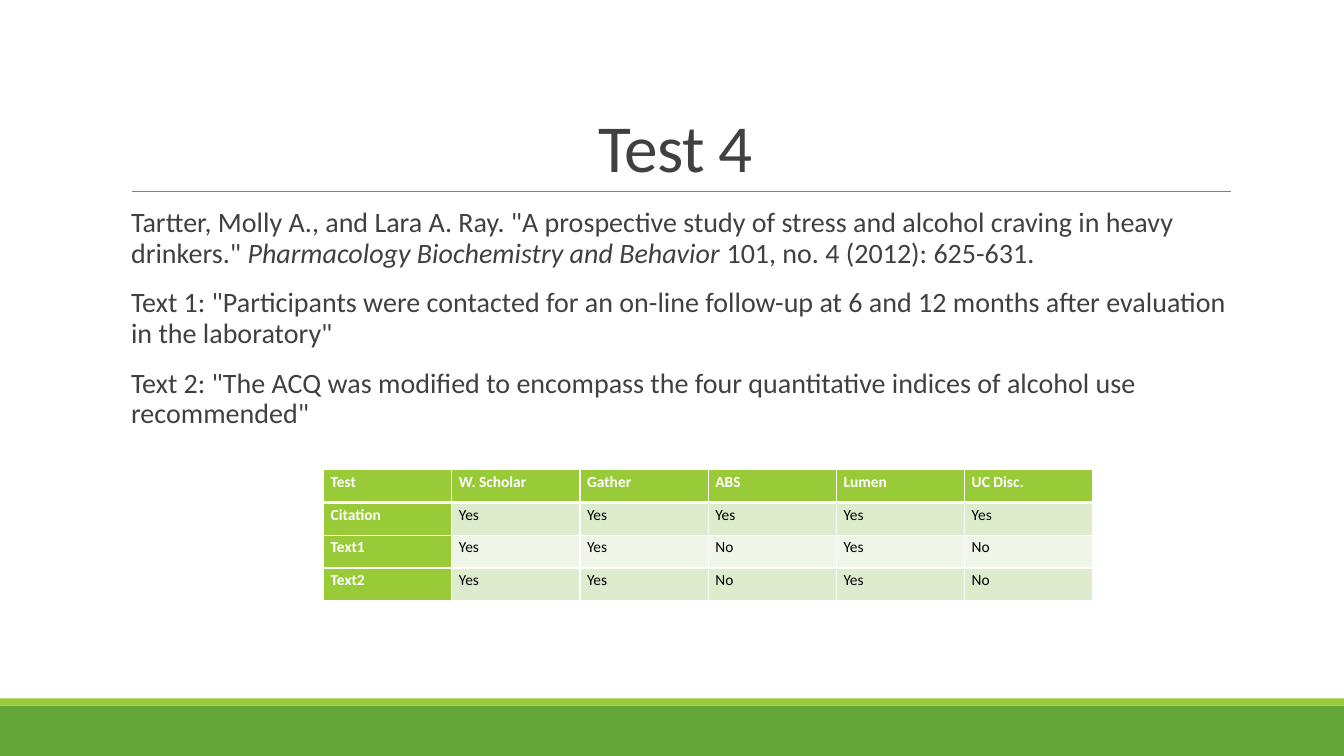
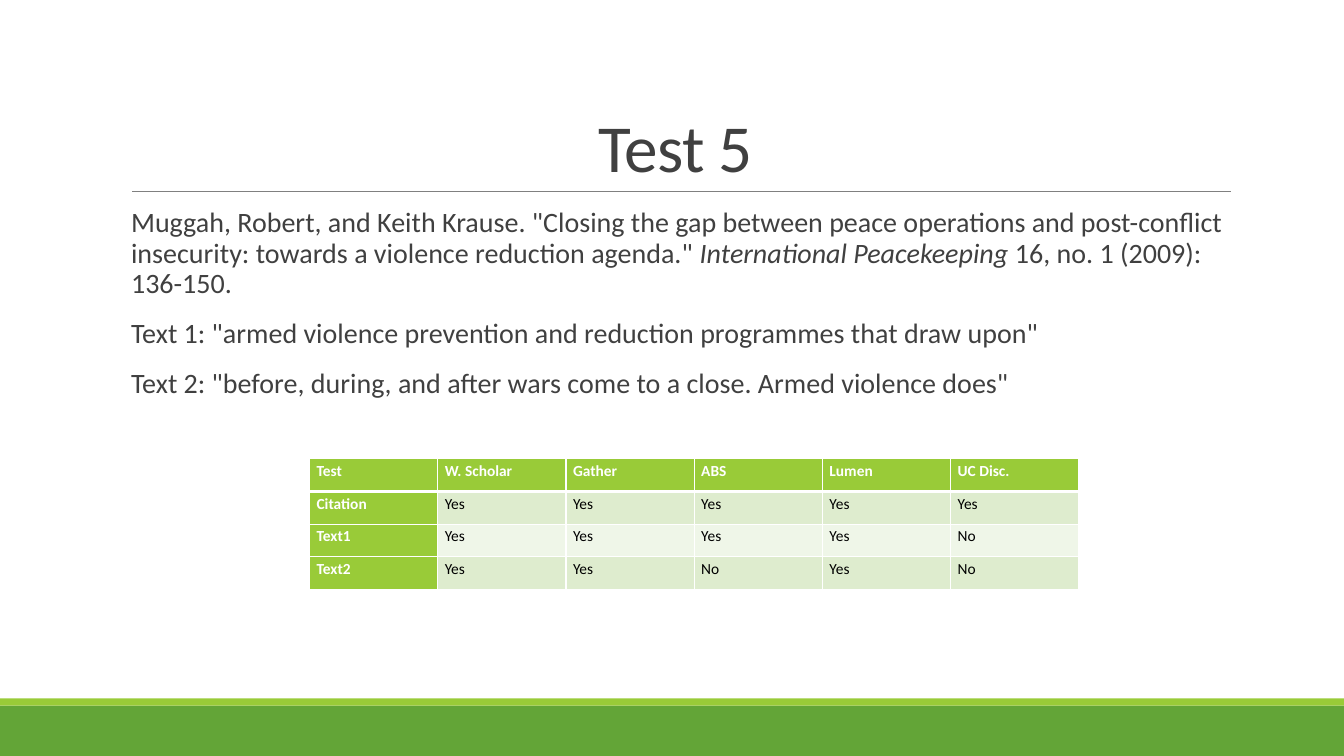
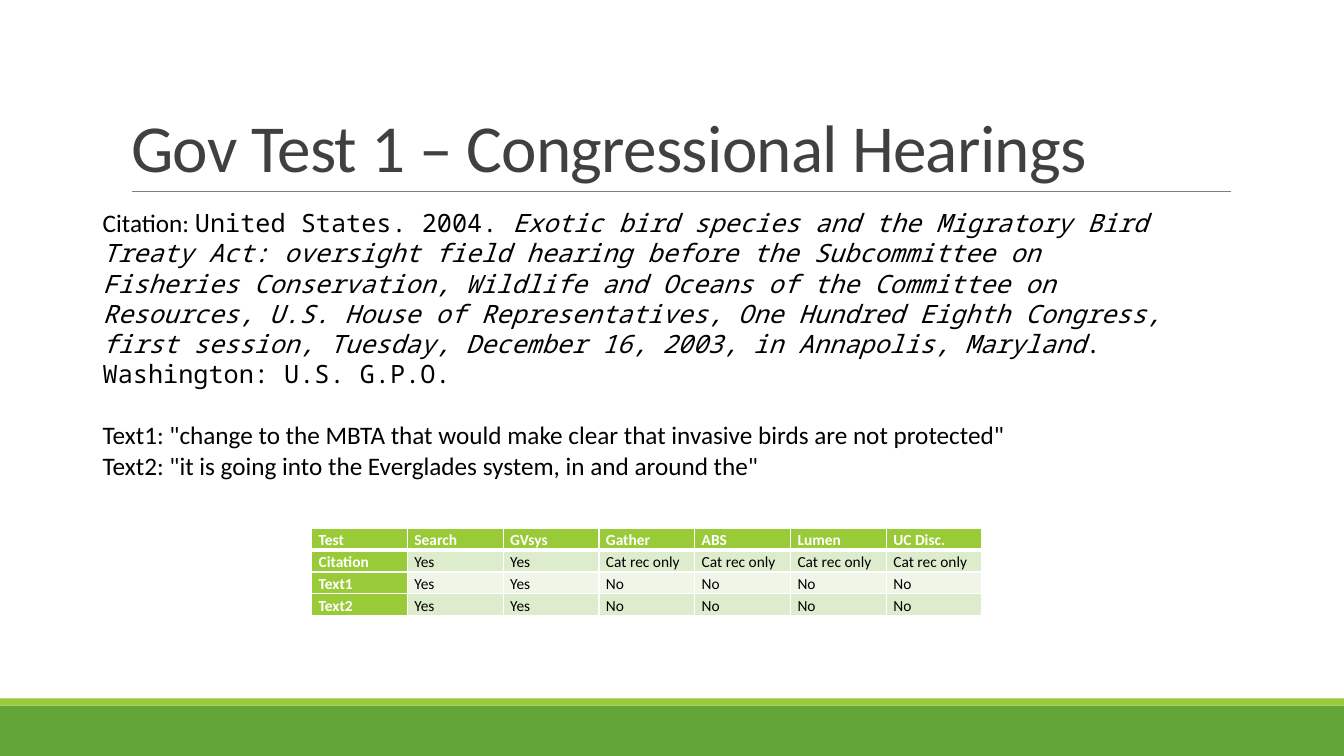
from pptx import Presentation
from pptx.dml.color import RGBColor
from pptx.enum.shapes import MSO_CONNECTOR, MSO_SHAPE
from pptx.enum.text import MSO_ANCHOR, MSO_AUTO_SIZE, PP_ALIGN
from pptx.oxml import parse_xml
from pptx.oxml.ns import nsdecls, qn
from pptx.util import Inches, Pt

RECT, LINE = MSO_SHAPE.RECTANGLE, MSO_CONNECTOR.STRAIGHT
LEFT, MID = PP_ALIGN.LEFT, PP_ALIGN.CENTER
TOP, BASE = MSO_ANCHOR.TOP, MSO_ANCHOR.BOTTOM
FIXED, GROW = MSO_AUTO_SIZE.NONE, MSO_AUTO_SIZE.SHAPE_TO_FIT_TEXT

HUES = {
    "band": "63A537", "lime": "99CB38", "rule": "808080", "ink": "404040",
    "black": "000000", "white": "FFFFFF", "tint": "DEECCE", "pale": "EFF6E8",
}
SANS, MONO = "Calibri", "Noto Sans Mono"
HEAD = {"name": SANS, "size": Pt(48)}
BODY = {"name": SANS, "size": Pt(20)}
NOTE = {"name": SANS, "size": Pt(18)}
CELL = {"name": SANS, "size": Pt(11)}
SLANT, CODE = {"italic": True}, {"name": MONO}

TITLE_BOX = (1.2, 0.31, 11, 1.59)
LIST_BOX = (1.2, 2.02, 11, 4.4)
NOTE_BOX = (0.92, 2.01, 10.99, 2.22)

TOOLS = ["Test", "W. Scholar", "Gather", "ABS", "Lumen", "UC Disc."]
TESTS = [
    {
        "title": "Test 4",
        "paras": [
            [("Tartter, Molly A., and Lara A. Ray. \"A prospective study of stress "
              "and alcohol craving in heavy drinkers.\" ", {}),
             ("Pharmacology Biochemistry and Behavior", SLANT),
             (" 101, no. 4 (2012): 625-631.", {})],
            [("Text 1: \"Participants were contacted for an on-line follow-up at 6 "
              "and 12 months after evaluation in the laboratory\"", {})],
            [("Text 2: \"The ACQ was modified to encompass the four quantitative "
              "indices of alcohol use recommended\"", {})],
        ],
        "box": (3.21, 4.66, 7.63, 1.3),
        "rows": [
            TOOLS,
            ["Citation"] + ["Yes"] * 5,
            ["Text1", "Yes", "Yes", "No", "Yes", "No"],
            ["Text2", "Yes", "Yes", "No", "Yes", "No"],
        ],
    },
    {
        "title": "Test 5",
        "paras": [
            [("Muggah, Robert, and Keith Krause. \"Closing the gap between peace "
              "operations and post-conflict insecurity: towards a violence "
              "reduction agenda.\" ", {}),
             ("International Peacekeeping", SLANT),
             (" 16, no. 1 (2009): 136-150.", {})],
            [("Text 1: \"armed violence prevention and reduction programmes that "
              "draw upon\"", {})],
            [("Text 2: \"before, during, and after wars come to a close. Armed "
              "violence does\"", {})],
        ],
        "box": (3.07, 4.55, 7.63, 1.3),
        "rows": [
            TOOLS,
            ["Citation"] + ["Yes"] * 5,
            ["Text1", "Yes", "Yes", "Yes", "Yes", "No"],
            ["Text2", "Yes", "Yes", "No", "Yes", "No"],
        ],
    },
]
HEARING = {
    "title": "Gov Test 1 – Congressional Hearings",
    "paras": [
        [("Citation: ", {}),
         ("United States. 2004. ", CODE),
         ("Exotic bird species and the Migratory Bird Treaty Act: oversight field "
          "hearing before the Subcommittee on Fisheries Conservation, Wildlife and "
          "Oceans of the Committee on Resources, U.S. House of Representatives, One "
          "Hundred Eighth Congress, first session, Tuesday, December 16, 2003, in "
          "Annapolis, Maryland", {**CODE, **SLANT}),
         (". Washington: U.S. G.P.O.", CODE)],
        [("Text1: \"change to the MBTA that would make clear that invasive birds "
          "are not protected\"", {})],
        [("Text2: \"it is going into the Everglades system, in and around the\"", {})],
    ],
    "box": (3.09, 5.24, 6.65, 0.8),
    "rows": [
        ["Test", "Search", "GVsys"] + TOOLS[2:],
        ["Citation", "Yes", "Yes"] + ["Cat rec only"] * 4,
        ["Text1", "Yes", "Yes"] + ["No"] * 4,
        ["Text2", "Yes", "Yes"] + ["No"] * 4,
    ],
}


def hue(name):
    return RGBColor.from_string(HUES[name])


def style(item, look):
    for key, value in look.items():
        setattr(item, key, value)


def place(shape, box):
    for key, value in zip(("left", "top", "width", "height"), box):
        setattr(shape, key, Inches(value))


def write(frame, paras, font, ink, form):
    """Fill a text frame; each paragraph is a list of (text, format) runs."""
    for i, runs in enumerate(paras):
        para = frame.add_paragraph() if i else frame.paragraphs[0]
        style(para, form)
        for text, extra in runs:
            run = para.add_run()
            run.text = text
            style(run.font, {**font, **extra})
            run.font.color.rgb = hue(ink)


def add_frame(slide):
    """Draw the bands and rule, then hand them to the slide master."""
    parts = []
    for name, top, high in (("band", 7, 0.5), ("lime", 6.93, 0.07)):
        bar = slide.shapes.add_shape(
            RECT, 0, Inches(top), Inches(13.33), Inches(high))
        bar.shadow.inherit = False
        bar.fill.solid()
        bar.fill.fore_color.rgb = hue(name)
        bar.line.fill.background()
        parts.append(bar)
    rule = slide.shapes.add_connector(
        LINE, Inches(1.31), Inches(1.9), Inches(12.21), Inches(1.9))
    rule.line.color.rgb = hue("rule")
    rule.line.width = Pt(0.5)
    rule.element.spPr.append(parse_xml(f"<a:effectLst {nsdecls('a')}/>"))
    parts.append(rule)
    master = slide.slide_layout.slide_master.element
    for i, part in enumerate(parts):
        master.cSld.spTree.insert(2 + i, part.element)
    # Title letter spacing
    for font in master.xpath(".//p:titleStyle/a:lvl1pPr/a:defRPr"):
        font.set("spc", "-50")


def add_title(slide, text, align, box):
    title = slide.shapes.title
    place(title, box)
    style(title.text_frame, {
        "vertical_anchor": BASE, "auto_size": FIXED, "word_wrap": True})
    write(title.text_frame, [[(text, {})]], HEAD, "ink",
          {"alignment": align, "line_spacing": 0.85})


def add_list(slide, paras, box):
    body = slide.placeholders[1]
    place(body, box)
    frame = body.text_frame
    style(frame, {"margin_left": 0, "margin_right": 0, "vertical_anchor": TOP,
                  "auto_size": FIXED, "word_wrap": True})
    write(frame, paras, BODY, "ink", {
        "line_spacing": 0.9, "space_before": Pt(12), "space_after": Pt(2)})
    # Plain paragraphs with a small left indent
    for props in body.element.iter(qn("a:pPr")):
        props.set("marL", str(Inches(0.1)))
        props.set("indent", "0")
        props.append(parse_xml(f"<a:buNone {nsdecls('a')}/>"))


def add_note(slide, paras, box):
    note = slide.shapes.add_textbox(*map(Inches, box))
    style(note.text_frame, {"word_wrap": True, "auto_size": GROW})
    write(note.text_frame, paras, NOTE, "black", {"alignment": LEFT})
    note.text_frame.paragraphs[1].space_before = Pt(22)


def edge(cell, row):
    """White borders, thicker below the header row."""
    props = cell._tc.get_or_add_tcPr()
    wide = {"T": 3 if row == 1 else 1, "B": 3 if row == 0 else 1}
    for side in "LRTB":
        props.append(parse_xml(
            f"<a:ln{side} {nsdecls('a')} w=\"{Pt(wide.get(side, 1))}\">"
            f"<a:solidFill><a:srgbClr val=\"{HUES['white']}\"/></a:solidFill>"
            f"</a:ln{side}>"))


def add_grid(slide, rows, box):
    table = slide.shapes.add_table(
        len(rows), len(rows[0]), *map(Inches, box)).table
    for r, row in enumerate(rows):
        for c, text in enumerate(row):
            cell = table.cell(r, c)
            head = r == 0 or c == 0
            style(cell, {"margin_left": Inches(0.07), "margin_right": Inches(0.07),
                         "margin_top": 0, "margin_bottom": 0})
            edge(cell, r)
            cell.fill.solid()
            cell.fill.fore_color.rgb = hue(
                "lime" if head else "tint" if r % 2 else "pale")
            write(cell.text_frame, [[(text, {"bold": head})]], CELL,
                  "white" if head else "black",
                  {"line_spacing": 1.15, "space_after": Pt(10)})


def add_test(deck, data):
    slide = deck.slides.add_slide(deck.slide_layouts[1])
    add_title(slide, data["title"], MID, TITLE_BOX)
    add_list(slide, data["paras"], LIST_BOX)
    add_grid(slide, data["rows"], data["box"])


def add_hearing(deck, data):
    slide = deck.slides.add_slide(deck.slide_layouts[5])
    add_title(slide, data["title"], LEFT, TITLE_BOX)
    add_grid(slide, data["rows"], data["box"])
    add_note(slide, data["paras"], NOTE_BOX)


def main():
    deck = Presentation()
    deck.slide_width, deck.slide_height = Inches(13.33), Inches(7.5)
    for data in TESTS:
        add_test(deck, data)
    add_hearing(deck, HEARING)
    add_frame(deck.slides[0])
    deck.save("out.pptx")


if __name__ == "__main__":
    main()
